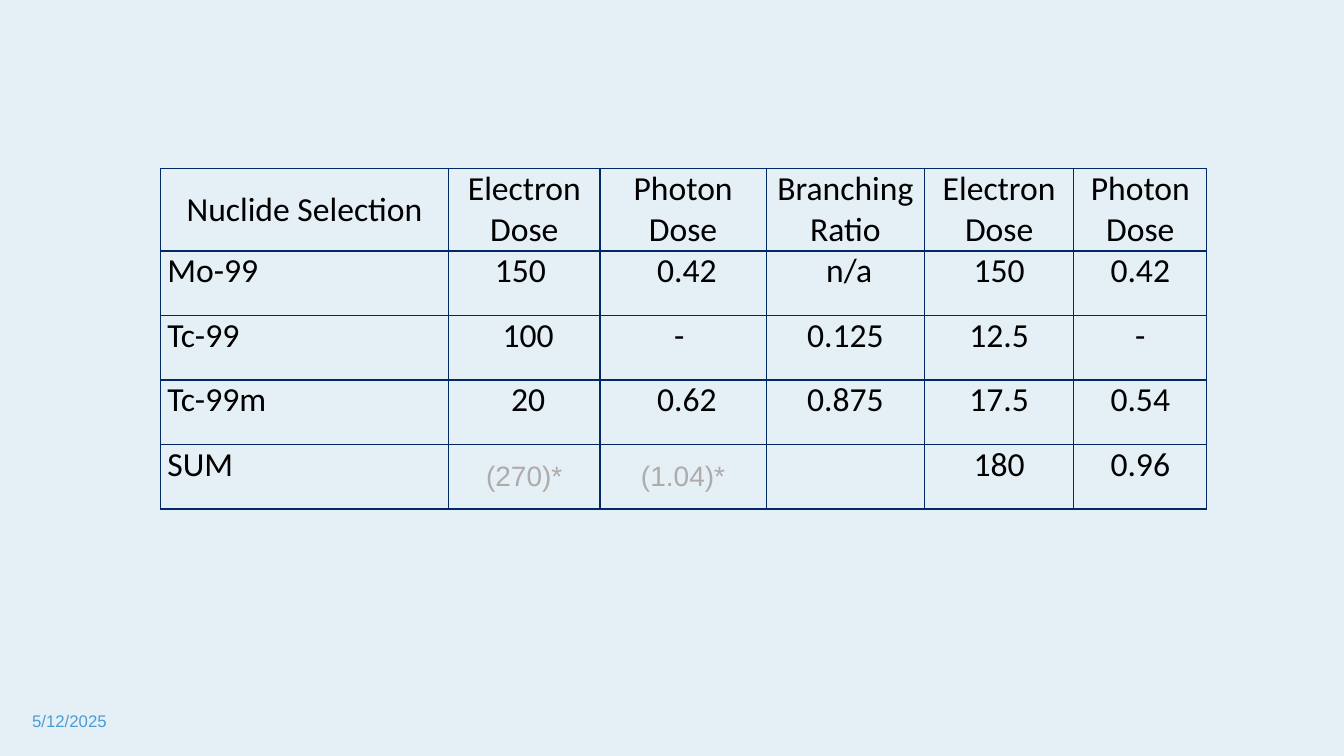
from pptx import Presentation
from pptx.dml.color import RGBColor
from pptx.enum.text import MSO_ANCHOR, PP_ALIGN
from pptx.oxml.ns import qn
from pptx.util import Pt
from lxml import etree

EMU_PER_PX = 9144
TOP, MIDDLE = MSO_ANCHOR.TOP, MSO_ANCHOR.MIDDLE
LEFT, CENTER, JUSTIFY = PP_ALIGN.LEFT, PP_ALIGN.CENTER, PP_ALIGN.JUSTIFY

BACKGROUND = "E5EFF6"
BORDER = "002966"
BODY = {"name": "Calibri", "size": Pt(24), "color": "000000"}
MUTED = {"name": "Arial", "size": Pt(20), "color": "AFABAB"}
DATE = {"name": "Arial", "size": Pt(12), "color": "4B9CD3"}

COLUMN_WIDTHS = [286, 150, 165, 157, 148, 132]
HEADER_HEIGHT, ROW_HEIGHT = 82, 64
DOSES = [
    ["Nuclide Selection", "Electron Dose", "Photon Dose",
     "Branching Ratio", "Electron Dose", "Photon Dose"],
    ["Mo-99", "150 ", " 0.42", " n/a", "150", "0.42"],
    ["Tc-99", " 100", "- ", "0.125", "12.5", "-"],
    ["Tc-99m", " 20", " 0.62", "0.875", "17.5", "0.54"],
    ["SUM", "(270)*", "(1.04)*", "", "180", "0.96"],
]


def px(length):
    return round(length * EMU_PER_PX)


def rgb(color):
    return RGBColor.from_string(color)


class DoseSlide:
    """Hold the slide and its style, and add each kind of element."""

    def __init__(self, deck):
        self.slide = deck.slides.add_slide(deck.slide_layouts[6])
        self.slide.background.fill.solid()
        self.slide.background.fill.fore_color.rgb = rgb(BACKGROUND)
        self.cell_format = {"margin_left": px(7), "margin_right": px(7),
                            "margin_top": 0, "margin_bottom": 0}

    def fill_text(self, frame, words, style, align):
        paragraph = frame.paragraphs[0]
        paragraph.alignment = align
        if not words:
            return
        run = paragraph.add_run()
        run.text = words
        for key, value in style.items():
            if key == "color":
                run.font.color.rgb = rgb(value)
            else:
                setattr(run.font, key, value)

    def text(self, left, top, width, height, words, style):
        frame = self.slide.shapes.add_textbox(
            px(left), px(top), px(width), px(height)).text_frame
        for key, value in {"word_wrap": True, "vertical_anchor": MIDDLE}.items():
            setattr(frame, key, value)
        self.fill_text(frame, words, style, LEFT)

    def border(self, cell):
        properties = cell._tc.get_or_add_tcPr()
        for side in ("a:lnL", "a:lnR", "a:lnT", "a:lnB"):
            line = etree.SubElement(properties, qn(side), w=str(Pt(1)))
            fill = etree.SubElement(line, qn("a:solidFill"))
            etree.SubElement(fill, qn("a:srgbClr"), val=BORDER)

    def cell(self, cell, words, style, align, anchor):
        for key, value in {**self.cell_format, "vertical_anchor": anchor}.items():
            setattr(cell, key, value)
        self.border(cell)
        cell.fill.background()
        self.fill_text(cell.text_frame, words, style, align)

    def table(self, left, top, widths, heights, rows):
        table = self.slide.shapes.add_table(
            len(heights), len(widths), px(left), px(top),
            px(sum(widths)), px(sum(heights))).table
        table.first_row = table.horz_banding = False
        for column, width in zip(table.columns, widths):
            column.width = px(width)
        for row, height in zip(table.rows, heights):
            row.height = px(height)
        for r, values in enumerate(rows):
            for c, words in enumerate(values):
                muted = words.endswith("*")
                self.cell(table.cell(r, c), words, MUTED if muted else BODY,
                          JUSTIFY if r and not c else CENTER,
                          MIDDLE if muted or not r else TOP)


def main():
    deck = Presentation()
    deck.slide_width, deck.slide_height = px(1333), px(750)
    slide = DoseSlide(deck)
    slide.text(22, 695, 300, 40, "5/12/2025", DATE)
    heights = [HEADER_HEIGHT] + [ROW_HEIGHT] * (len(DOSES) - 1)
    slide.table(159, 167, COLUMN_WIDTHS, heights, DOSES)
    deck.save("out.pptx")


if __name__ == "__main__":
    main()
